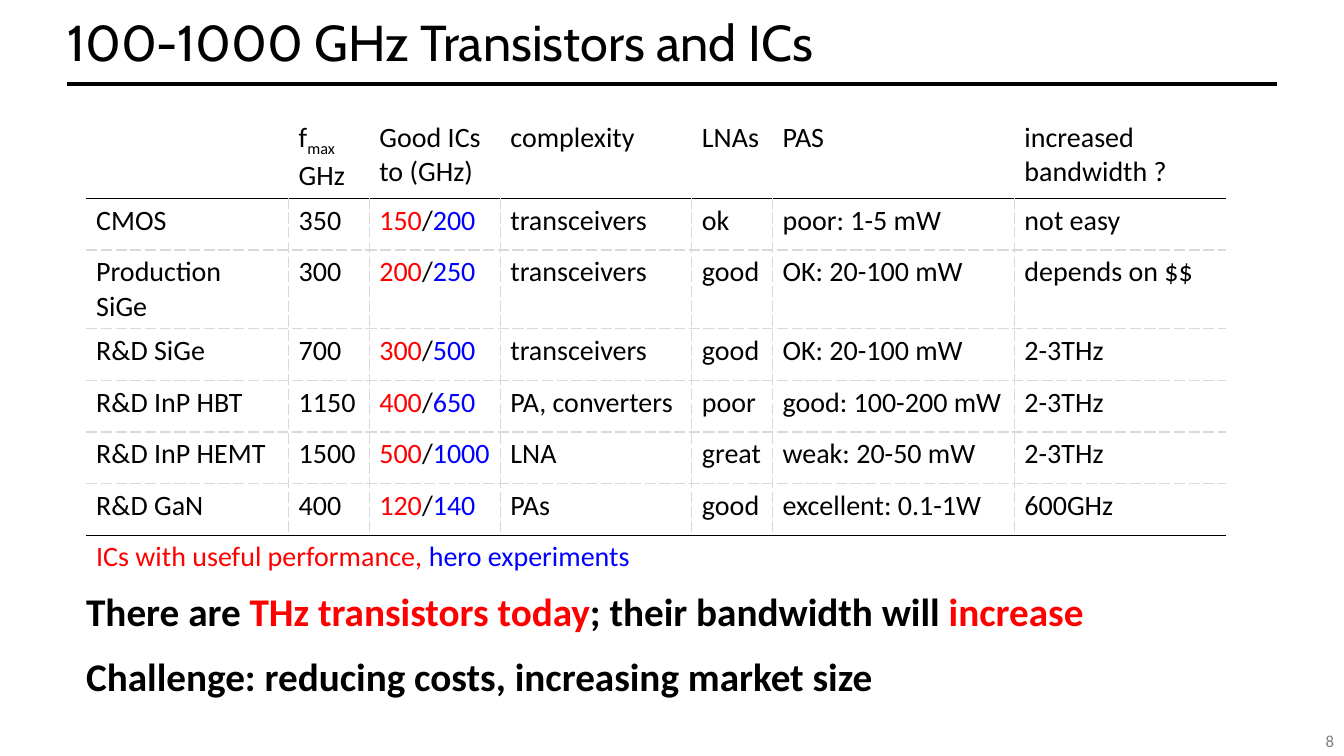
from dataclasses import dataclass

from lxml.etree import SubElement
from pptx import Presentation
from pptx.dml.color import RGBColor
from pptx.enum.shapes import MSO_CONNECTOR
from pptx.enum.text import MSO_ANCHOR, PP_ALIGN
from pptx.oxml.ns import qn
from pptx.util import Pt


@dataclass(frozen=True)
class Theme:
    black: str = "000000"
    white: str = "FFFFFF"
    red: str = "FF0000"
    blue: str = "0000FF"
    grid: str = "D9D9D9"
    grey: str = "7F7F7F"
    head: str = "Cabin"
    body: str = "Calibri"
    title: int = 36
    claim: int = 28
    cell: int = 20
    page: int = 12


theme = Theme()


def write(par, runs, size, bold=False, font=theme.body):
    """Add (text, colour) runs to a paragraph and return the last one."""
    for text, color in runs:
        run = par.add_run()
        run.text = text
        run.font.name = font
        run.font.size = Pt(size)
        run.font.bold = bold
        run.font.color.rgb = RGBColor.from_string(color)
    return run


def edge(cell, side, color=None, dash="solid"):
    """Set one cell border; without a colour the border is empty."""
    line = SubElement(cell._tc.get_or_add_tcPr(), qn("a:ln" + side), w=str(Pt(1)))
    if color is None:
        SubElement(line, qn("a:noFill"))
    else:
        fill = SubElement(line, qn("a:solidFill"))
        SubElement(fill, qn("a:srgbClr"), val=color)
        SubElement(line, qn("a:prstDash"), val=dash)


deck = Presentation()
deck.slide_width, deck.slide_height = Pt(960), Pt(540)
slide = deck.slides.add_slide(deck.slide_layouts[5])
shapes = slide.shapes

# Title and rule
title = shapes.title
title.left, title.top, title.width, title.height = Pt(48), Pt(16.5), Pt(876), Pt(32)
frame = title.text_frame
frame.margin_left = frame.margin_right = frame.margin_top = frame.margin_bottom = 0
frame.vertical_anchor = MSO_ANCHOR.MIDDLE
par = frame.paragraphs[0]
par.alignment = PP_ALIGN.LEFT
par.line_spacing = 0.87
write(par, [("100-1000 GHz Transistors and ICs", theme.black)], theme.title, font=theme.head)

rule = shapes.add_connector(MSO_CONNECTOR.STRAIGHT, Pt(48), Pt(60), Pt(912), Pt(60))
rule.line.width = Pt(3)
rule.line.color.rgb = RGBColor.from_string(theme.black)
SubElement(rule._element.spPr, qn("a:effectLst"))

# Table
widths = [144.7, 57.6, 93.6, 136.8, 57.6, 172.8, 151.2]
heads = ["", "", "Good ICs to (GHz)", "complexity", "LNAs", "PAS", "increased \nbandwidth ?"]
devices = [
    ["CMOS", "350", "150/200", "transceivers", "ok", "poor: 1-5 mW", "not easy"],
    ["Production SiGe", "300", "200/250", "transceivers", "good", "OK: 20-100 mW", "depends on $$"],
    ["R&D SiGe", "700", "300/500", "transceivers", "good", "OK: 20-100 mW", "2-3THz"],
    ["R&D InP HBT", "1150", "400/650", "PA, converters", "poor", "good: 100-200 mW", "2-3THz"],
    ["R&D InP HEMT", "1500", "500/1000", "LNA", "great", "weak: 20-50 mW", "2-3THz"],
    ["R&D GaN", "400", "120/140", "PAs", "good", "excellent: 0.1-1W", "600GHz"],
]
rows = [heads, *devices, [""] * len(widths)]
last, end = len(rows) - 1, len(widths) - 1

table = shapes.add_table(len(rows), len(widths), Pt(61.5), Pt(82.8), Pt(814.3), Pt(306.5)).table
table.first_row = table.horz_banding = False
for col, width in zip(table.columns, widths):
    col.width = Pt(width)
for row in table.rows:
    row.height = Pt(36.9)
table.rows[0].height = Pt(48.2)
table.cell(last, 0).merge(table.cell(last, end))

dashed = (theme.grid, "sysDash")
solid = (theme.black,)
levels = [(), solid, *[dashed] * (len(devices) - 1), solid, ()]
for i, row in enumerate(rows):
    for j, text in enumerate(row):
        cell = table.cell(i, j)
        inner = 0 < i < last
        edge(cell, "L", *(dashed if inner and j > 0 else ()))
        edge(cell, "R", *(dashed if inner and j < end else ()))
        edge(cell, "T", *levels[i])
        edge(cell, "B", *levels[i + 1])
        cell.fill.solid()
        cell.fill.fore_color.rgb = RGBColor.from_string(theme.white)
        par = cell.text_frame.paragraphs[0]
        if inner and j == 2:
            useful, hero = text.split("/")
            runs = [(useful, theme.red), ("/", theme.black), (hero, theme.blue)]
            write(par, runs, theme.cell)
        elif text:
            for n, part in enumerate(text.split("\n")):
                if n:
                    par.add_line_break()
                write(par, [(part, theme.black)], theme.cell)

fmax = table.cell(0, 1).text_frame
write(fmax.paragraphs[0], [("f", theme.black)], theme.cell)
sub = write(fmax.paragraphs[0], [("max", theme.black)], theme.cell)
sub.font._element.set("baseline", "-25000")
write(fmax.add_paragraph(), [("GHz", theme.black)], theme.cell)

legend = [("ICs with useful performance, ", theme.red), ("hero experiments", theme.blue)]
write(table.cell(last, 0).text_frame.paragraphs[0], legend, theme.cell)

# Claims
frame = shapes.add_textbox(Pt(61.5), Pt(419.5), Pt(868), Pt(85)).text_frame
frame.word_wrap = True
frame.margin_left = frame.margin_right = frame.margin_top = frame.margin_bottom = 0
today = [
    ("There are ", theme.black),
    ("THz transistors today", theme.red),
    ("; their bandwidth will ", theme.black),
    ("increase", theme.red),
]
write(frame.paragraphs[0], today, theme.claim, bold=True)
par = frame.add_paragraph()
par.space_before = Pt(13)
cost = [("Challenge: reducing costs, increasing market size", theme.black)]
write(par, cost, theme.claim, bold=True)

# Page number
frame = shapes.add_textbox(Pt(904), Pt(520), Pt(56), Pt(20)).text_frame
frame.word_wrap = True
par = frame.paragraphs[0]
par.alignment = PP_ALIGN.RIGHT
par.line_spacing = 0.9
write(par, [("8", theme.grey)], theme.page)

deck.save("out.pptx")
